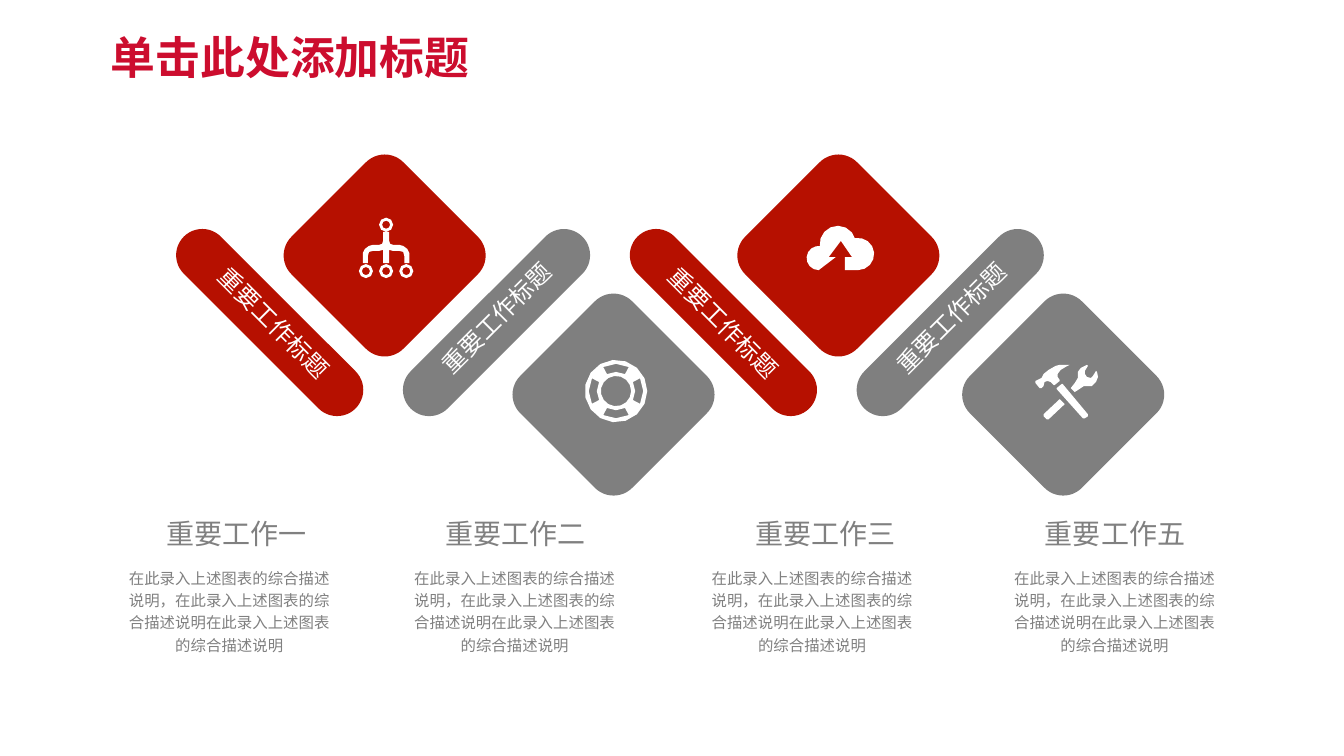
from math import cos, radians, sin

from lxml import etree
from pptx import Presentation
from pptx.dml.color import RGBColor
from pptx.enum.shapes import MSO_SHAPE
from pptx.enum.text import MSO_ANCHOR, MSO_AUTO_SIZE, PP_ALIGN
from pptx.oxml.ns import qn
from pptx.util import Inches, Pt

ROUNDED = MSO_SHAPE.ROUNDED_RECTANGLE
CENTER, LEFT = PP_ALIGN.CENTER, PP_ALIGN.LEFT
TOP, MIDDLE = MSO_ANCHOR.TOP, MSO_ANCHOR.MIDDLE
GROW, FIXED = MSO_AUTO_SIZE.SHAPE_TO_FIT_TEXT, MSO_AUTO_SIZE.NONE
COLORS = {"red": "B61000", "gray": "7F7F7F", "white": "FFFFFF",
          "text": "808080", "title": "CC0D2E"}
SANS, TITLE_FONT = "Noto Sans CJK SC", "Montserrat"
LABEL = "重要工作标题"
BODY = "在此录入上述图表的综合描述说明，在此录入上述图表的综合描述说明在此录入上述图表的综合描述说明"


def color(name):
    return RGBColor.from_string(COLORS[name])


def paint(shape, fill):
    shape.shadow.inherit = False
    shape.fill.solid()
    shape.fill.fore_color.rgb = color(fill)
    shape.line.fill.background()


def add_text(shapes, box, text, size, fill, font=SANS, bold=False, align=CENTER,
             anchor=TOP, spacing=1.0, inset=(0.1, 0.05), wrap=True, fit=FIXED):
    tb = shapes.add_textbox(*map(Inches, box))
    tf = tb.text_frame
    tf.word_wrap = wrap
    tf.auto_size = fit
    tf.vertical_anchor = anchor
    tf.margin_left = tf.margin_right = Inches(inset[0])
    tf.margin_top = tf.margin_bottom = Inches(inset[1])
    p = tf.paragraphs[0]
    p.alignment = align
    p.line_spacing = spacing
    r = p.add_run()
    r.text = text
    r.font.size = Pt(size)
    r.font.bold = bold
    r.font.name = font
    r.font.color.rgb = color(fill)
    etree.SubElement(r.font._element, qn("a:ea"), typeface=font)
    return tb


def add_rounded(shapes, box, fill, rotation):
    sp = shapes.add_shape(ROUNDED, *map(Inches, box))
    sp.rotation = rotation
    paint(sp, fill)
    return sp


def arc(cx, cy, radius, start, end):
    steps = max(2, round(abs(end - start) / (24 if radius > 0.1 else 45)))
    angles = [radians(start + (end - start) * i / steps) for i in range(steps + 1)]
    return [(cx + radius * cos(a), cy + radius * sin(a)) for a in angles]


def circle(cx, cy, radius):
    return arc(cx, cy, radius, 0, 360)[:-1]


def network_icon():
    half = [(0.03, 0.14), (0.03, 0.23), (0.04, 0.26), (0.07, 0.27), (0.13, 0.27),
            (0.17, 0.28), (0.21, 0.31), (0.23, 0.35), (0.23, 0.45), (0.18, 0.45),
            (0.18, 0.38), (0.17, 0.34), (0.13, 0.33), (0.07, 0.33), (0.03, 0.32),
            (0.03, 0.45)]
    mid = 0.27
    branches = [(mid + x, y) for x, y in half] + [(mid - x, y) for x, y in half[::-1]]
    nodes = [(mid, 0.07), (0.07, 0.53), (mid, 0.53), (0.47, 0.53)]
    return [branches] + [circle(x, y, r) for x, y in nodes for r in (0.07, 0.04)]


def cloud_icon():
    arrow = [(0.29, 0.44), (0.29, 0.31), (0.22, 0.31), (0.34, 0.15),
             (0.45, 0.31), (0.38, 0.31), (0.38, 0.44)]
    return [arc(0.51, 0.28, 0.16, 90, -100) + arc(0.31, 0.18, 0.18, -15, -187)
            + arc(0.12, 0.32, 0.12, -80, -270) + arrow[1:]]


def lifebuoy_icon():
    c = 0.31
    gaps = [arc(c, c, 0.27, a - 28, a + 28) + arc(c, c, 0.19, a + 28, a - 28)
            for a in range(0, 360, 90)]
    return [circle(c, c, 0.31), circle(c, c, 0.15)] + gaps


def tools_icon():
    hammer = [(0.09, 0.18), (0.12, 0.17), (0.15, 0.18), (0.18, 0.21), (0.19, 0.21),
              (0.24, 0.17), (0.24, 0.16), (0.22, 0.13), (0.22, 0.1), (0.25, 0.06),
              (0.3, 0.03), (0.34, 0.01), (0.24, 0.01), (0.2, 0.02), (0.13, 0.06),
              (0.08, 0.1), (0.06, 0.14), (0.02, 0.16), (0, 0.17), (0, 0.19),
              (0.04, 0.24), (0.06, 0.24), (0.08, 0.22)]
    handle = [(0.27, 0.2), (0.26, 0.2), (0.21, 0.24), (0.21, 0.25), (0.47, 0.54),
              (0.49, 0.54), (0.52, 0.52), (0.52, 0.5)]
    wrench = [(0.61, 0.08), (0.6, 0.07), (0.57, 0.12), (0.55, 0.14), (0.51, 0.13),
              (0.49, 0.1), (0.49, 0.07), (0.52, 0.02), (0.51, 0.01), (0.45, 0.04),
              (0.42, 0.08), (0.42, 0.14), (0.39, 0.19), (0.35, 0.24), (0.39, 0.28),
              (0.45, 0.24), (0.48, 0.22), (0.51, 0.22), (0.56, 0.22), (0.6, 0.18),
              (0.62, 0.13)]
    grip = [(0.08, 0.5), (0.08, 0.52), (0.11, 0.55), (0.13, 0.55), (0.29, 0.4),
            (0.24, 0.35)]
    return [hammer, handle, wrench, grip]


def add_icon(shapes, x, y, contours):
    placed = [[(Inches(x + dx), Inches(y + dy)) for dx, dy in c] for c in contours]
    fb = shapes.build_freeform(*placed[0][0])
    fb.add_line_segments(placed[0][1:], close=True)
    for contour in placed[1:]:
        fb.move_to(*contour[0])
        fb.add_line_segments(contour[1:], close=True)
    paint(fb.convert_to_shape(), "white")


def add_diamond(s, x, y, fill, icon, dx, dy):
    shapes = s.shapes.add_group_shape().shapes
    add_rounded(shapes, (x, y, 1.57, 1.57), fill, 45)
    add_icon(shapes, x + dx, y + dy, icon)


def add_ribbon(s, x, y, fill, rotation, dx, dy):
    shapes = s.shapes.add_group_shape().shapes
    add_rounded(shapes, (x, y, 2.41, 0.52), fill, rotation).adjustments[0] = 0.5
    tb = add_text(shapes, (x + dx, y + dy, 1.63, 0.39), LABEL, 17, "white",
                  wrap=False, fit=GROW)
    tb.rotation = rotation


def add_column(s, x, y, heading, dx, width):
    add_text(s.shapes, (x, y + 0.4, 2.33, 1.02), BODY, 11, "text", spacing=1.2,
             inset=(0.13, 0.07), fit=GROW)
    add_text(s.shapes, (x + dx, y, width, 0.31), heading, 20, "text", spacing=0.8)


def build_slide(prs):
    s = prs.slides.add_slide(prs.slide_layouts[6])
    for x, y, fill, icon, dx, dy in [
            (3.03, 1.75, "red", network_icon(), 0.53, 0.41),
            (7.53, 1.75, "red", cloud_icon(), 0.47, 0.49),
            (5.3, 3.13, "gray", lifebuoy_icon(), 0.5, 0.44),
            (9.76, 3.13, "gray", tools_icon(), 0.51, 0.48)]:
        add_diamond(s, x, y, fill, icon, dx, dy)
    for i, dx in enumerate([0.43, 0.39, 0.39, 0.4]):
        fill, rotation, dy = [("red", 45, 0.07), ("gray", 315, 0.02)][i % 2]
        add_ribbon(s, 1.47 + 2.25 * i, 2.94, fill, rotation, dx, dy)
    for x, heading, dx, width in [
            (1.11, "重要工作一", 0.34, 1.79), (3.94, "重要工作二", 0.28, 1.78),
            (6.89, "重要工作三", 0.33, 1.93), (9.89, "重要工作五", 0.22, 1.9)]:
        add_column(s, x, 5.14, heading, dx, width)
    add_text(s.shapes, (1, 0.28, 11.5, 0.62), "单击此处添加标题", 32, "title",
             TITLE_FONT, bold=True, align=LEFT, anchor=MIDDLE, spacing=0.9)


def main():
    prs = Presentation()
    prs.slide_width, prs.slide_height = Inches(13.33), Inches(7.5)
    build_slide(prs)
    prs.save("out.pptx")


if __name__ == "__main__":
    main()
